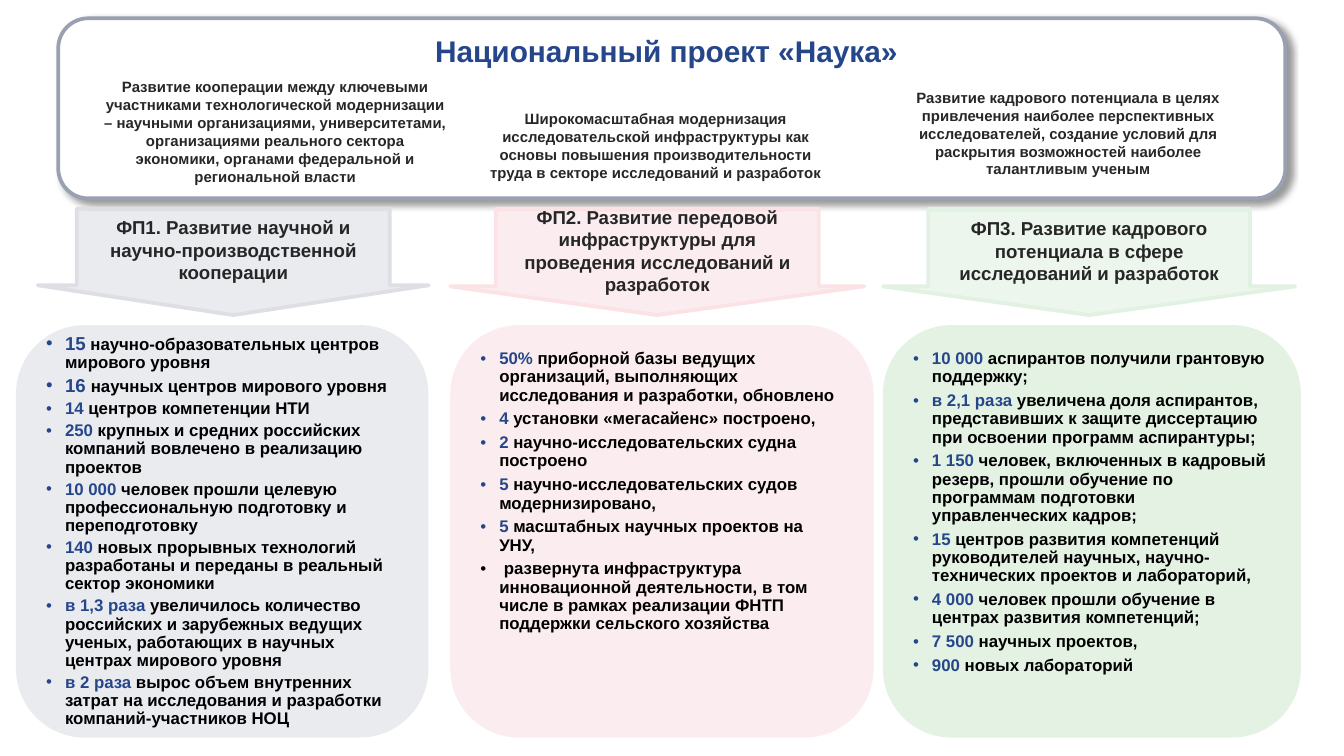
from lxml import etree
from pptx import Presentation
from pptx.dml import color
from pptx.enum import shapes, text
from pptx.oxml import ns
from pptx.util import Pt

BLUE, DARK, BLACK = "25468A", "262626", "000000"
TITLE = "Национальный проект «Наука»"

GOALS = [
    (48.2, 38.2, 65.5, "Развитие кооперации между ключевыми участниками технологической модернизации – научными организациями, университетами, организациями реального сектора экономики, органами федеральной и региональной власти"),
    (252, 55.4, 46.1, "Широкомасштабная модернизация исследовательской инфраструктуры как основы повышения производительности труда в секторе исследований и разработок"),
    (473, 43.9, 55.4, "Развитие кадрового потенциала в целях привлечения наиболее перспективных исследователей, создание условий для раскрытия возможностей наиболее талантливым ученым"),
]

COLUMNS = [
    {
        "heading": "ФП1. Развитие научной и научно-производственной кооперации",
        "arrow": (20.2, 209.5), "adjust": (0.8, 0.28), "colours": ("BAC0CC", "DDDFE5", "BAC0CC"),
        "card": (8.6, 221), "anchor": "MIDDLE", "gap": 2, "large": 2,
        "items": [
            ("15", " научно-образовательных центров мирового уровня"),
            ("16 ", "научных центров мирового уровня"),
            ("14", " центров компетенции НТИ"),
            ("250 ", "крупных и средних российских компаний вовлечено в реализацию проектов"),
            ("10 000 ", "человек прошли целевую профессиональную подготовку и переподготовку"),
            ("140 ", "новых прорывных технологий разработаны и переданы в реальный сектор экономики"),
            ("в 1,3 раза ", "увеличилось количество российских и зарубежных ведущих ученых, работающих в научных центрах мирового уровня"),
            ("в 2 раза ", "вырос объем внутренних затрат на исследования и разработки компаний-участников НОЦ"),
        ],
    },
    {
        "heading": "ФП2. Развитие передовой инфраструктуры для проведения исследований и разработок",
        "arrow": (241.2, 221.8), "adjust": (0.78, 0.27), "colours": ("F5C4CB", "FAE2E5", "F5C4CB"),
        "card": (241.2, 226.8), "anchor": "TOP", "gap": 3, "large": 0,
        "items": [
            ("50% ", "приборной базы ведущих организаций, выполняющих исследования и разработки, обновлено"),
            ("4 ", "установки «мегасайенс» построено,"),
            ("2 ", "научно-исследовательских судна построено"),
            ("5", " научно-исследовательских судов модернизировано,"),
            ("5", " масштабных научных проектов на УНУ,"),
            ("", " развернута инфраструктура инновационной деятельности, в том числе в рамках реализации ФНТП поддержки сельского хозяйства"),
        ],
    },
    {
        "heading": "ФП3. Развитие кадрового потенциала в сфере исследований и разработок",
        "arrow": (473, 221), "adjust": (0.78, 0.27), "colours": ("C4E2C5", "E1F1E2", "A6D4A7"),
        "card": (473, 223.9), "anchor": "TOP", "gap": 3, "large": 0,
        "items": [
            ("10 000 ", "аспирантов получили грантовую поддержку;"),
            ("в 2,1 раза ", "увеличена доля аспирантов, представивших к защите диссертацию при освоении программ аспирантуры;"),
            ("1 150 ", "человек, включенных в кадровый резерв, прошли обучение по программам подготовки управленческих кадров;"),
            ("15 ", "центров развития компетенций руководителей научных, научно-технических проектов и лабораторий,"),
            ("4 000 ", "человек прошли обучение в центрах развития компетенций;"),
            ("7 500 ", "научных проектов,"),
            ("900", " новых лабораторий"),
        ],
    },
]


def rgb(value):
    return color.RGBColor.from_string(value)


def apply(target, **values):
    for name, value in values.items():
        setattr(target, name, value)


def child(parent, tag, **values):
    return etree.SubElement(parent, ns.qn(tag), {key: str(value) for key, value in values.items()})


def add_shape(page, kind, place, fill=None, opacity=100, line=None):
    shape = page.shapes.add_shape(kind, *map(Pt, place))
    shape.shadow.inherit = False
    if fill:
        shape.fill.solid()
        shape.fill.fore_color.rgb = rgb(fill)
        if opacity < 100:
            tint = shape.fill._xPr.find(".//" + ns.qn("a:srgbClr"))
            child(tint, "a:alpha", val=opacity * 1000)
    else:
        shape.fill.background()
    if line:
        shape.line.color.rgb = rgb(line)
        shape.line.width = Pt(2)
    else:
        shape.line.fill.background()
    return shape


def add_span(para, words, size, colour):
    span = para.add_run()
    span.text = words
    apply(span.font, name="Arial", size=Pt(size), bold=True)
    span.font.color.rgb = rgb(colour)


def write_centred(shape, words, size, colour, after=0):
    shape.text_frame.word_wrap = True
    para = shape.text_frame.paragraphs[0]
    apply(para, alignment=text.PP_ALIGN.CENTER, space_after=Pt(after))
    add_span(para, words, size, colour)


def add_shadow(shape):
    effects = shape._element.spPr.find(ns.qn("a:effectLst"))
    shadow = child(effects, "a:outerShdw", blurRad=Pt(4), dist=Pt(3), dir=45 * 60000, algn="tl", rotWithShape=0)
    tint = child(shadow, "a:srgbClr", val=BLACK)
    child(tint, "a:alpha", val=40000)


def write_items(shape, column):
    frame = shape.text_frame
    apply(frame, word_wrap=True, vertical_anchor=text.MSO_ANCHOR[column["anchor"]],
          margin_left=Pt(5.4), margin_right=Pt(5.4), margin_top=Pt(2.7), margin_bottom=Pt(2.7))
    for index, (figure, words) in enumerate(column["items"]):
        para = frame.add_paragraph() if index else frame.paragraphs[0]
        props = para._p.get_or_add_pPr()
        props.set("marL", str(Pt(10.1)))
        props.set("indent", str(-Pt(10.1)))
        child(props, "a:buFont", typeface="Arial")
        child(props, "a:buChar", char="•")
        apply(para, alignment=text.PP_ALIGN.LEFT, line_spacing=0.9, space_after=Pt(column["gap"]))
        if figure:
            add_span(para, figure, 10 if index < column["large"] else 9, BLUE)
        add_span(para, words, 9, BLACK)


def main():
    deck = Presentation()
    apply(deck, slide_width=Pt(720), slide_height=Pt(405))
    page = deck.slides.add_slide(deck.slide_layouts[6])
    rounded, arrow_kind = shapes.MSO_SHAPE.ROUNDED_RECTANGLE, shapes.MSO_SHAPE.DOWN_ARROW

    banner = add_shape(page, rounded, (31.2, 9.8, 657.4, 96.5), "FFFFFF", line="98A0B2")
    add_shadow(banner)
    for left, top, height, words in GOALS:
        box = page.shapes.add_textbox(*map(Pt, (left, top, 198.7, height)))
        write_centred(box, words, 8, DARK, after=6)
        box.text_frame.auto_size = text.MSO_AUTO_SIZE.SHAPE_TO_FIT_TEXT
    title = add_shape(page, rounded, (184.3, 10.1, 345.6, 33.8))
    write_centred(title, TITLE, 16, BLUE)

    for column in COLUMNS:
        arrow_fill, arrow_line, card_fill = column["colours"]
        left, width = column["arrow"]
        arrow = add_shape(page, arrow_kind, (left, 111.8, width, 57), arrow_fill, 30, arrow_line)
        for index, value in enumerate(column["adjust"]):
            arrow.adjustments[index] = value
        write_centred(arrow, column["heading"], 10, DARK)
        left, width = column["card"]
        card = add_shape(page, rounded, (left, 174.2, width, 221), card_fill, 30)
        write_items(card, column)

    deck.save("out.pptx")


if __name__ == "__main__":
    main()
